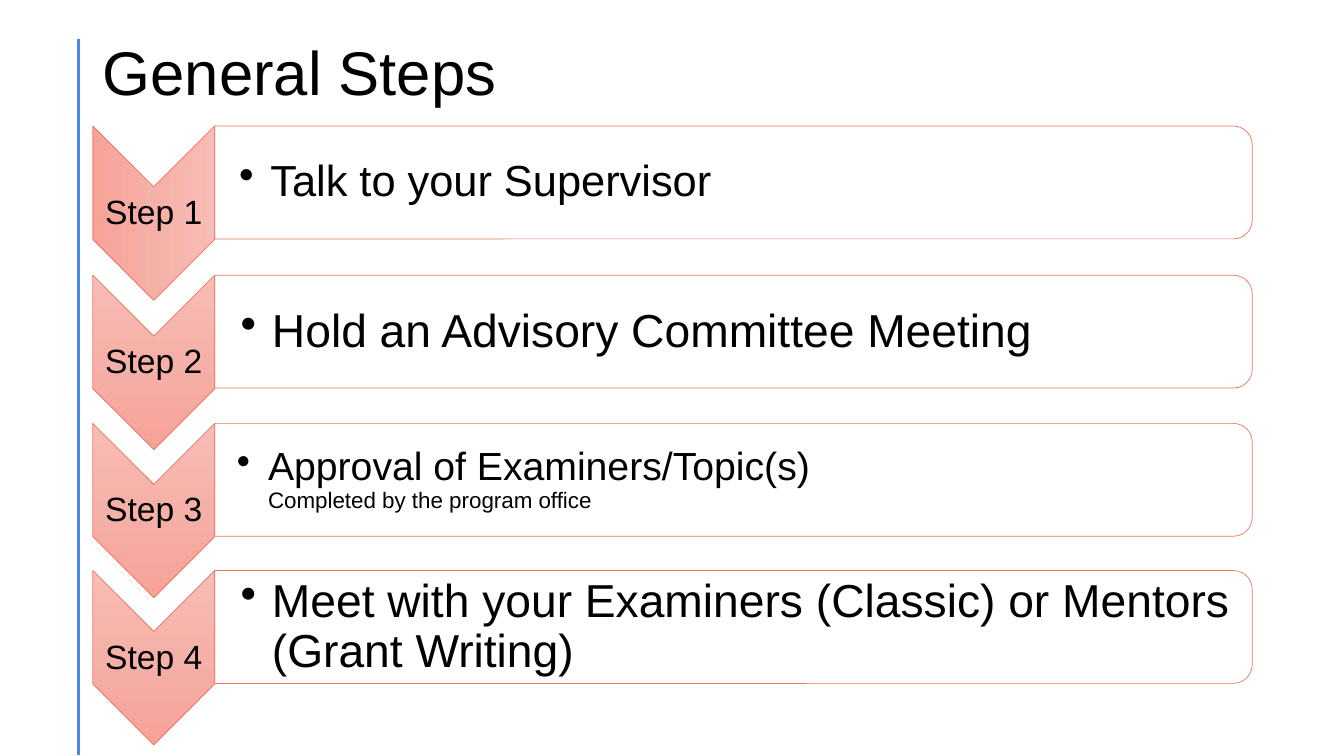
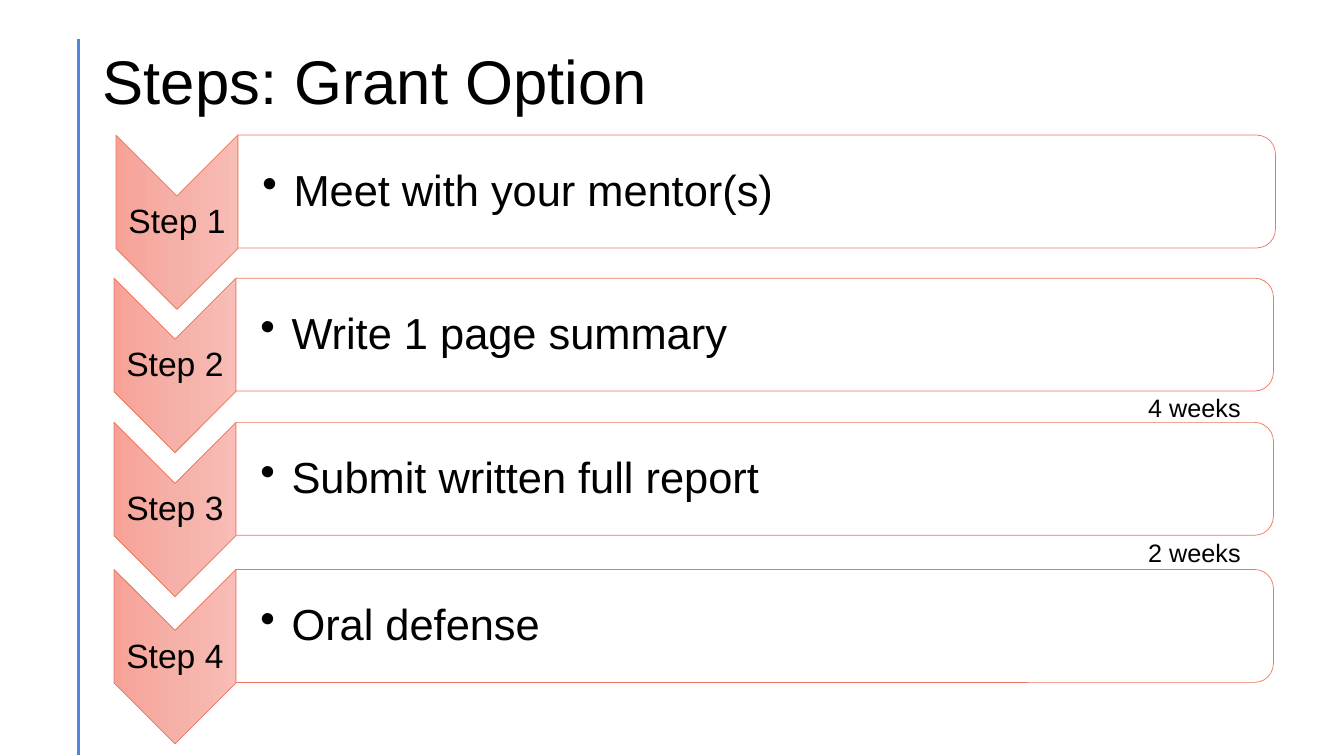
"""Builds two slides of chevron steps, each step with a rounded description box."""
from lxml import etree
from pptx import Presentation
from pptx.dml.color import RGBColor
from pptx.enum.shapes import MSO_CONNECTOR, MSO_SHAPE
from pptx.enum.text import MSO_ANCHOR, PP_ALIGN
from pptx.oxml import parse_xml
from pptx.oxml.ns import nsdecls, qn
from pptx.util import Inches, Pt

STRAIGHT = MSO_CONNECTOR.STRAIGHT
CHEVRON = MSO_SHAPE.CHEVRON
ROUND_TOP = MSO_SHAPE.ROUND_2_SAME_RECTANGLE
MIDDLE, TOP = MSO_ANCHOR.MIDDLE, MSO_ANCHOR.TOP
LEFT, CENTER = PP_ALIGN.LEFT, PP_ALIGN.CENTER

FONT = "Arial"
BLACK, WHITE, RULE, OUTLINE = "000000", "FFFFFF", "4A89DC", "EE7661"
GRADIENT = [(0, "F8BDB6"), (50, "F5B0A7"), (100, "F7A297")]
ACROSS, DOWN = 90, 0

CHEVRON_WIDTH, CHEVRON_HEIGHT = 1.21, 1.73
BOX_WIDTH, BOX_HEIGHT = 10.29, 1.12
HANGING = 0.31
INSET = 0.02

# Each step: left, top, gradient angle, lines of (text, size).
SLIDES = [
    {
        "title": "General Steps",
        "title_top": 0.02,
        "steps": [
            (0.92, 1.25, ACROSS, [("Talk to your Supervisor", 31)]),
            (0.92, 2.73, DOWN, [("Hold an Advisory Committee Meeting", 33)]),
            (0.92, 4.2, DOWN, [("Approval of Examiners/Topic(s)", 28),
                               ("Completed by the program office", 16)]),
            (0.92, 5.66, DOWN, [("Meet with your Examiners (Classic) or Mentors (Grant Writing)", 33)]),
        ],
        "waits": [],
    },
    {
        "title": "Steps: Grant Option",
        "title_top": 0.11,
        "steps": [
            (1.15, 1.34, ACROSS, [("Meet with your mentor(s)", 31)]),
            (1.13, 2.76, ACROSS, [("Write 1 page summary", 31)]),
            (1.13, 4.19, ACROSS, [("Submit written full report", 31)]),
            (1.13, 5.65, ACROSS, [("Oral defense", 31)]),
        ],
        "waits": [("4 weeks", 3.84), ("2 weeks", 5.28)],
    },
]


def rgb(color):
    """Return the colour of a hex string."""
    return RGBColor.from_string(color)


def add_text(slide, area, lines, anchor=MIDDLE, align=LEFT, spacing=0.9, insets=None):
    """Add a text box whose lines share one paragraph, and return the paragraph."""
    box = slide.shapes.add_textbox(*map(Inches, area))
    frame = box.text_frame
    frame.word_wrap = True
    frame.vertical_anchor = anchor
    if insets:
        frame.margin_left, frame.margin_top, frame.margin_right, frame.margin_bottom = map(Inches, insets)
    paragraph = frame.paragraphs[0]
    paragraph.alignment = align
    paragraph.line_spacing = spacing
    paragraph.font.name = FONT
    paragraph.font.size = Pt(lines[0][1])
    paragraph.font.color.rgb = rgb(BLACK)
    for index, (text, size) in enumerate(lines):
        if index:
            paragraph.add_line_break()
        run = paragraph.add_run()
        run.text = text
        run.font.name = FONT
        run.font.size = Pt(size)
        run.font.color.rgb = rgb(BLACK)
    return paragraph


def add_bullet(paragraph):
    """Give a paragraph a hanging round bullet."""
    properties = paragraph._p.get_or_add_pPr()
    properties.set("marL", str(Inches(HANGING)))
    properties.set("indent", str(-Inches(HANGING)))
    etree.SubElement(properties, qn("a:buChar")).set("char", "•")


def add_turned(slide, kind, left, top, width, height):
    """Add an outlined shape turned a quarter clockwise that fills the given area."""
    shape = slide.shapes.add_shape(
        kind, Inches(left + (width - height) / 2), Inches(top + (height - width) / 2),
        Inches(height), Inches(width))
    shape.rotation = 90
    shape.shadow.inherit = False
    shape.line.color.rgb = rgb(OUTLINE)
    shape.line.width = Pt(0.5)
    return shape


def fill_gradient(shape, angle):
    """Fill a shape with the chevron gradient at an angle."""
    stops = "".join(
        f'<a:gs pos="{position * 1000}"><a:srgbClr val="{color}"/></a:gs>' for position, color in GRADIENT)
    gradient = parse_xml(
        f'<a:gradFill {nsdecls("a")} rotWithShape="1"><a:gsLst>{stops}</a:gsLst>'
        f'<a:lin ang="{angle * 60000}" scaled="0"/></a:gradFill>')
    shape._element.spPr.find(qn("a:prstGeom")).addnext(gradient)


def add_step(slide, number, left, top, angle, lines):
    """Add one numbered chevron and its description."""
    fill_gradient(add_turned(slide, CHEVRON, left, top, CHEVRON_WIDTH, CHEVRON_HEIGHT), angle)
    add_text(slide, (left, top + 0.61, CHEVRON_WIDTH, 0.52), [(f"Step {number}", 24)],
             align=CENTER, insets=[INSET] * 4)

    box_left = left + CHEVRON_WIDTH
    box = add_turned(slide, ROUND_TOP, box_left, top, BOX_WIDTH, BOX_HEIGHT)
    box.fill.solid()
    box.fill.fore_color.rgb = rgb(WHITE)
    color = box._element.spPr.find(qn("a:solidFill"))[0]
    etree.SubElement(color, qn("a:alpha")).set("val", "90000")
    text_inset = lines[0][1] / 128
    add_bullet(add_text(slide, (box_left, top + 0.06, 10.24, 1.01), lines,
                        insets=(text_inset, INSET, INSET, INSET)))


def add_frame(slide, title, title_top):
    """Add the side rule and the title that every slide has."""
    rule = slide.shapes.add_connector(STRAIGHT, Inches(0.78), Inches(0.39), Inches(0.78), Inches(7.49))
    rule.line.color.rgb = rgb(RULE)
    rule.line.width = Pt(2)
    etree.SubElement(rule._element.spPr, qn("a:effectLst"))
    add_text(slide, (0.92, title_top, 11.5, 1.45), [(title, 44)])


def main():
    """Build and save the presentation."""
    deck = Presentation()
    deck.slide_width, deck.slide_height = Inches(13.33), Inches(7.5)
    for content in SLIDES:
        slide = deck.slides.add_slide(deck.slide_layouts[6])
        add_frame(slide, content["title"], content["title_top"])
        for number, step in enumerate(content["steps"], 1):
            add_step(slide, number, *step)
        for wait, top in content["waits"]:
            add_text(slide, (11.29, top, 1.37, 0.4), [(wait, 18)], anchor=TOP, spacing=1.0)
    deck.save("out.pptx")


if __name__ == "__main__":
    main()
